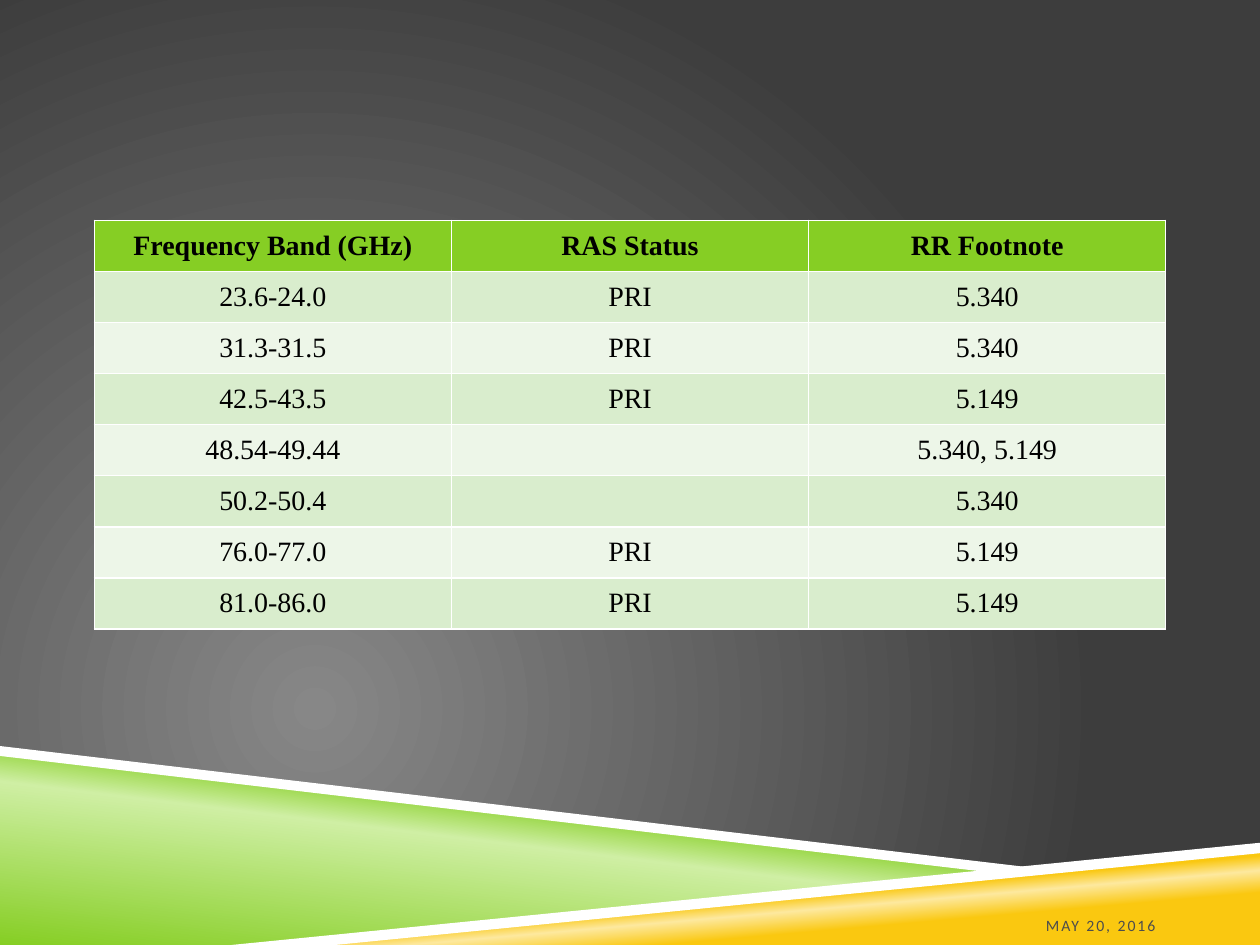
from pptx import Presentation
from pptx.dml.color import RGBColor
from pptx.enum.text import MSO_ANCHOR, PP_ALIGN
from pptx.oxml import parse_xml
from pptx.oxml.ns import nsdecls
from pptx.util import Cm, Pt

MIDDLE, BOTTOM = MSO_ANCHOR.MIDDLE, MSO_ANCHOR.BOTTOM
CENTER, RIGHT = PP_ALIGN.CENTER, PP_ALIGN.RIGHT
WHITE, GREEN, GOLD = "FFFFFF", "86CE24", "FAC810"
BANDS = ("D9EDCD", "EDF6E8")
WIDTH, HEIGHT = 25.4, 19.05

ROWS = [
    ("Frequency Band (GHz)", "RAS Status", "RR Footnote"),
    ("23.6-24.0", "PRI", "5.340"),
    ("31.3-31.5", "PRI", "5.340"),
    ("42.5-43.5", "PRI", "5.149"),
    ("48.54-49.44", "", "5.340, 5.149"),
    ("50.2-50.4", "", "5.340"),
    ("76.0-77.0", "PRI", "5.149"),
    ("81.0-86.0", "PRI", "5.149"),
]


def color(code):
    return RGBColor.from_string(code)


class SlideBuilder:
    """Draws the elements of the current slide in one shared style."""

    table_font = {"name": "Times New Roman", "size": Pt(16)}
    date_font = {"name": "Calibri", "size": Pt(9), "bold": False}

    def __init__(self, page):
        self.page = page

    def gradient(self, fill, element, stops, direction):
        fill.gradient()
        grad = element.xpath(".//a:gradFill")[0]
        grad.clear()
        marks = "".join(
            f'<a:gs pos="{place * 1000}"><a:srgbClr val="{code}"/></a:gs>'
            for place, code in stops
        )
        grad.append(parse_xml(f'<a:gsLst {nsdecls("a")}>{marks}</a:gsLst>'))
        grad.append(parse_xml(direction))

    def background(self, stops):
        direction = (
            f'<a:path {nsdecls("a")} path="circle">'
            '<a:fillToRect l="50000" t="100000" r="100000" b="50000"/></a:path>'
        )
        self.gradient(self.page.background.fill, self.page._element, stops, direction)

    def polygon(self, points, stops=None, angle=0):
        corners = [(Cm(x), Cm(y)) for x, y in points]
        builder = self.page.shapes.build_freeform(*corners[0])
        builder.add_line_segments(corners[1:], close=True)
        shape = builder.convert_to_shape()
        shape.shadow.inherit = False
        shape.line.fill.background()
        if stops:
            direction = f'<a:lin {nsdecls("a")} ang="{angle * 60000}" scaled="0"/>'
            self.gradient(shape.fill, shape._element, stops, direction)
        else:
            shape.fill.solid()
            shape.fill.fore_color.rgb = color(WHITE)

    def add_span(self, para, text, align, style, code):
        para.alignment = align
        span = para.add_run()
        span.text = text
        for name, value in style.items():
            setattr(span.font, name, value)
        span.font.color.rgb = color(code)
        return span

    def table(self, rows, left, top, column_width, row_height):
        count = len(rows[0])
        grid = self.page.shapes.add_table(
            len(rows), count, Cm(left), Cm(top),
            Cm(column_width * count), Cm(row_height * len(rows)),
        ).table
        for index, row in enumerate(rows):
            shade = BANDS[(index - 1) % 2] if index else GREEN
            style = {**self.table_font, "bold": index == 0}
            for cell, text in zip(grid.rows[index].cells, row):
                cell.fill.solid()
                cell.fill.fore_color.rgb = color(shade)
                cell.vertical_anchor = MIDDLE
                cell.margin_left = cell.margin_right = Cm(0.18)
                cell.margin_top = cell.margin_bottom = 0
                if text:
                    para = cell.text_frame.paragraphs[0]
                    self.add_span(para, text, CENTER, style, "000000")

    def date(self, text, left, top, width, height):
        box = self.page.shapes.add_textbox(Cm(left), Cm(top), Cm(width), Cm(height))
        frame = box.text_frame
        frame.word_wrap = True
        frame.vertical_anchor = BOTTOM
        frame.margin_left = frame.margin_right = frame.margin_bottom = 0
        span = self.add_span(frame.paragraphs[0], text, RIGHT, self.date_font, "4D4D4D")
        span.font._element.set("spc", "110")


def main():
    deck = Presentation()
    deck.slide_width, deck.slide_height = Cm(WIDTH), Cm(HEIGHT)
    slide = SlideBuilder(deck.slides.add_slide(deck.slide_layouts[6]))
    slide.background([(0, "878787"), (100, "3D3D3D")])
    slide.polygon(
        [(0, 15.16), (20.12, 17.58), (5.08, HEIGHT), (0, HEIGHT)],
        [(0, GREEN), (52, "CFEFA4"), (66, GREEN)], 277,
    )
    slide.polygon(
        [(5.03, HEIGHT), (WIDTH, 17.07), (WIDTH, HEIGHT)],
        [(28, GOLD), (40, "FDE99F"), (48, GOLD)], 265,
    )
    slide.polygon([(0, 15.04), (0, 15.24), (20.07, 17.6), (21.13, 17.53)])
    slide.polygon([(WIDTH, 16.99), (4.67, HEIGHT), (6.76, HEIGHT), (WIDTH, 17.2)])
    slide.table(ROWS, 1.9, 4.44, 7.2, 1.03)
    slide.date("MAY 20, 2016", 17.78, 17.83, 5.51, 1.02)
    deck.save("out.pptx")


if __name__ == "__main__":
    main()
